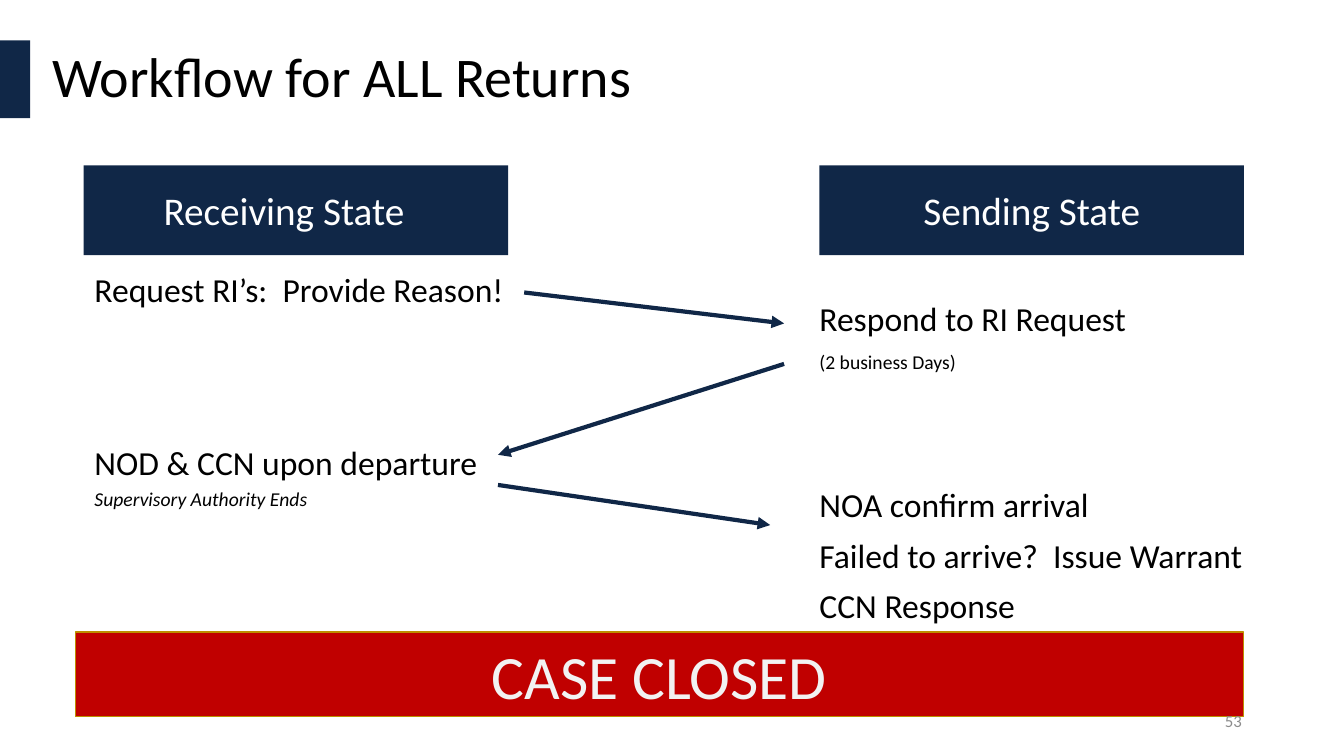
from lxml import etree
from pptx import Presentation
from pptx.dml.color import RGBColor
from pptx.enum.shapes import MSO_CONNECTOR, MSO_SHAPE
from pptx.enum.text import MSO_ANCHOR, MSO_AUTO_SIZE, PP_ALIGN
from pptx.oxml.ns import qn
from pptx.util import Cm, Pt

RECT = MSO_SHAPE.RECTANGLE
STRAIGHT = MSO_CONNECTOR.STRAIGHT
MIDDLE = MSO_ANCHOR.MIDDLE
LEFT, CENTER, RIGHT = PP_ALIGN.LEFT, PP_ALIGN.CENTER, PP_ALIGN.RIGHT
NO_FIT = MSO_AUTO_SIZE.NONE

COLORS = {
    "navy": "102747", "red": "C00000", "gold": "BD8E00", "black": "000000",
    "white": "FFFFFF", "pale": "F2F2F2", "gray": "8C8C8C",
}
FONT = "Calibri"

TITLE = "Workflow for ALL Returns"
CLOSING = "CASE CLOSED"
PAGE = "53"
STATES = [
    {
        "header": "Receiving State", "header_left": 2.11, "right_inset": 0.61,
        "list_box": (1.9, 6.88, 10.9, 7.14), "indent": 0.48,
        "steps": [
            ("Request RI’s:  Provide Reason!", 24, False, 0),
            ("NOD & CCN upon departure", 24, False, 98),
            ("Supervisory Authority Ends", 14, True, 5),
        ],
    },
    {
        "header": "Sending State", "header_left": 20.65, "right_inset": 0,
        "list_box": (20.65, 7.62, 10.9, 8.2), "indent": 0,
        "steps": [
            ("Respond to RI Request", 24, False, 0),
            ("(2 business Days)", 14, False, 10),
            ("NOA confirm arrival", 24, False, 82),
            ("Failed to arrive?  Issue Warrant", 24, False, 10),
            ("CCN Response", 24, False, 10),
        ],
    },
]
ARROWS = [
    (13.21, 7.37, 19.76, 8.15),
    (19.76, 9.17, 12.55, 11.46),
    (12.55, 12.22, 19.41, 13.23),
]


def rgb(name):
    return RGBColor.from_string(COLORS[name])


def place(sp, box):
    sp.left, sp.top, sp.width, sp.height = [Cm(v) for v in box]


def prepare_frame(sp, right_inset=0):
    tf = sp.text_frame
    tf.word_wrap = True
    tf.auto_size = NO_FIT
    tf.margin_left = tf.margin_top = tf.margin_bottom = 0
    tf.margin_right = Cm(right_inset)
    return tf


def add_text(p, text, size, color, align=LEFT, italic=False):
    p.alignment = align
    r = p.add_run()
    r.text = text
    r.font.name = FONT
    r.font.size = Pt(size)
    r.font.italic = italic
    r.font.color.rgb = rgb(color)


def add_bar(s, box, fill, line=None):
    sp = s.shapes.add_shape(RECT, *[Cm(v) for v in box])
    sp.shadow.inherit = False
    sp.fill.solid()
    sp.fill.fore_color.rgb = rgb(fill)
    if line:
        sp.line.color.rgb = rgb(line)
        sp.line.width = Pt(1)
    else:
        sp.line.fill.background()
    return sp


def add_label(sp, text, size, color, align=CENTER, right_inset=0):
    tf = prepare_frame(sp, right_inset)
    tf.vertical_anchor = MIDDLE
    add_text(tf.paragraphs[0], text, size, color, align)
    return tf


def fill_steps(sp, state):
    place(sp, state["list_box"])
    tf = prepare_frame(sp)
    for i, (text, size, italic, before) in enumerate(state["steps"]):
        p = tf.add_paragraph() if i else tf.paragraphs[0]
        pPr = p._p.get_or_add_pPr()
        pPr.set("marL", str(Cm(state["indent"])))
        pPr.set("indent", "0")
        etree.SubElement(pPr, qn("a:buNone"))
        p.line_spacing = 0.9
        p.space_before = Pt(before)
        add_text(p, text, size, "black", italic=italic)


def add_arrow(s, ends):
    c = s.shapes.add_connector(STRAIGHT, *[Cm(v) for v in ends])
    c.line.color.rgb = rgb("navy")
    c.line.width = Pt(3)
    etree.SubElement(c.line._get_or_add_ln(), qn("a:tailEnd"), type="triangle")
    etree.SubElement(c._element.spPr, qn("a:effectLst"))


def main():
    prs = Presentation()
    prs.slide_width, prs.slide_height = Cm(33.87), Cm(19.05)
    s = prs.slides.add_slide(prs.slide_layouts[3])
    title, *lists = s.placeholders

    place(title, (1.32, 1.02, 31.27, 1.96))
    tf = add_label(title, TITLE, 40, "black", LEFT)
    tf.paragraphs[0].line_spacing = 0.9
    add_bar(s, (0, 1.02, 0.76, 1.96), "navy")

    for state, sp in zip(STATES, lists):
        fill_steps(sp, state)
        header = add_bar(s, (state["header_left"], 4.17, 10.7, 2.26), "navy")
        add_label(header, state["header"], 28, "white",
                  right_inset=state["right_inset"])

    for ends in ARROWS:
        add_arrow(s, ends)

    closing = add_bar(s, (1.9, 15.93, 29.44, 2.13), "red", "gold")
    add_label(closing, CLOSING, 44, "pale")

    number = s.shapes.add_textbox(Cm(23.93), Cm(17.65), Cm(7.62), Cm(1.02))
    add_label(number, PAGE, 12, "gray", RIGHT, right_inset=0.25)

    prs.save("out.pptx")


if __name__ == "__main__":
    main()
